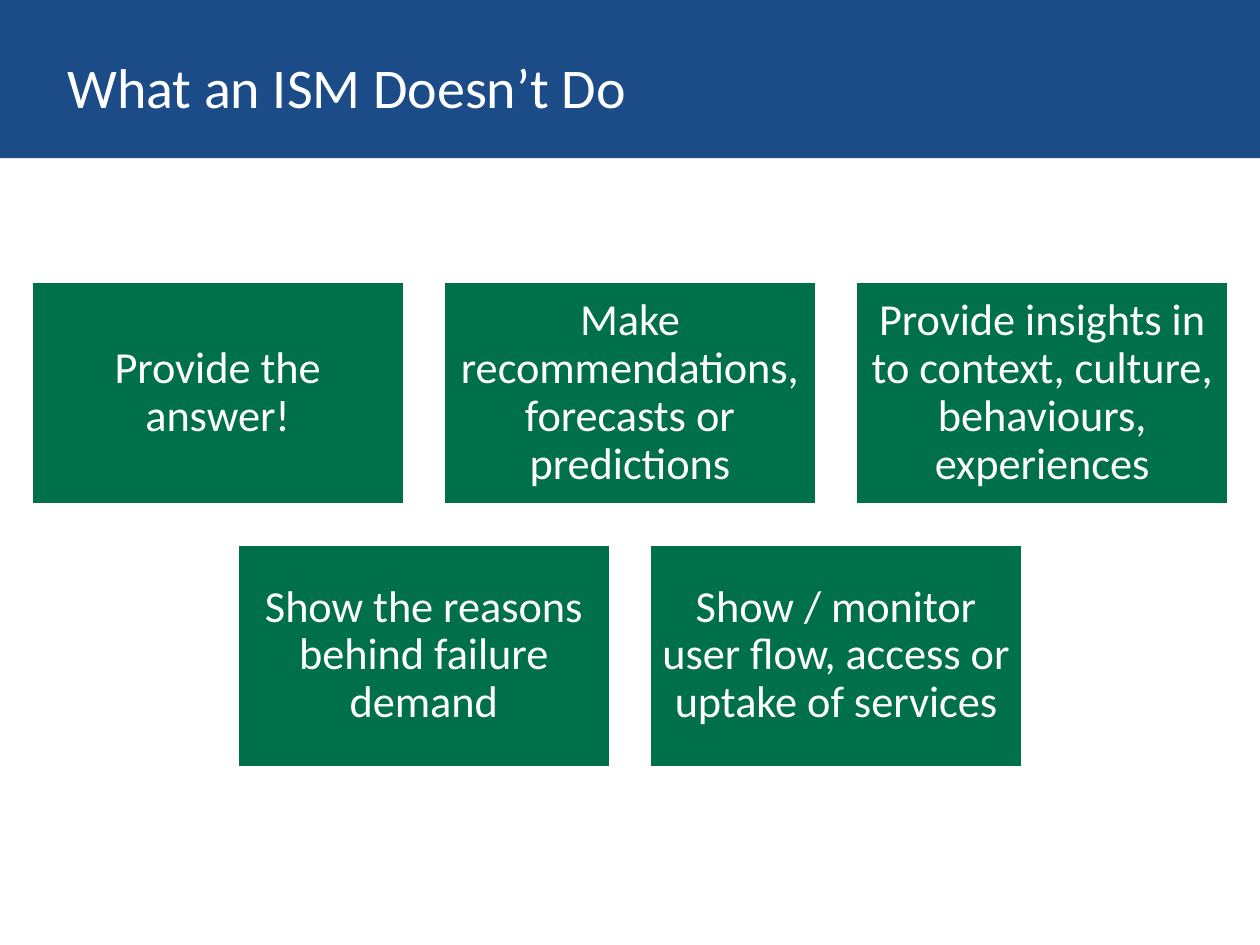
from pptx import Presentation
from pptx.dml.color import RGBColor
from pptx.enum.shapes import MSO_SHAPE
from pptx.enum.text import MSO_ANCHOR, MSO_AUTO_SIZE, PP_ALIGN
from pptx.util import Pt

RECT = MSO_SHAPE.RECTANGLE
MIDDLE = MSO_ANCHOR.MIDDLE
NO_FIT = MSO_AUTO_SIZE.NONE
LEFT, CENTER = PP_ALIGN.LEFT, PP_ALIGN.CENTER

SLIDE_W, SLIDE_H = 540, 405
BLUE, GREEN, WHITE = "1B4C87", "00704A", "FFFFFF"
TITLE = "What an ISM Doesn’t Do"
CARD_ROWS = [
    ["Provide the answer!",
     "Make recommendations, forecasts or predictions",
     "Provide insights in to context, culture, behaviours, experiences"],
    ["Show the reasons behind failure demand",
     "Show / monitor user flow, access or uptake of services"],
]


def color(value):
    return RGBColor.from_string(value)


def set_attrs(obj, values):
    for name, value in values.items():
        setattr(obj, name, value)


def add_rect(s, x, y, w, h, fill, line=None):
    sp = s.shapes.add_shape(RECT, Pt(x), Pt(y), Pt(w), Pt(h))
    sp.shadow.inherit = False
    sp.fill.solid()
    sp.fill.fore_color.rgb = color(fill)
    if line:
        sp.line.color.rgb = color(line)
        sp.line.width = Pt(2)
    else:
        sp.line.fill.background()
    return sp


def write_text(sp, text, size, align, inset, spacing=1.0):
    tf = sp.text_frame
    margins = dict.fromkeys(
        ["margin_left", "margin_top", "margin_right", "margin_bottom"], Pt(inset))
    set_attrs(tf, {"word_wrap": True, "auto_size": NO_FIT,
                   "vertical_anchor": MIDDLE, **margins})
    p = tf.paragraphs[0]
    set_attrs(p, {"alignment": align, "line_spacing": spacing})
    r = p.add_run()
    r.text = text
    set_attrs(r.font, {"name": "Calibri", "size": Pt(size)})
    r.font.color.rgb = color(WHITE)


def add_header(s, x, y, w, h):
    band = add_rect(s, x, y, w, h, BLUE)
    title = s.shapes.title
    band._element.addnext(title._element)
    set_attrs(title, {"left": Pt(x + 28.8), "top": Pt(y + 23.8),
                      "width": Pt(w - 39), "height": Pt(26.6)})
    write_text(title, TITLE, 24, LEFT, 0)


def add_cards(s, x, y, w):
    columns = max(len(row) for row in CARD_ROWS)
    card_w = w / (columns + 0.1 * (columns - 1))
    card_h, gap = card_w * 0.6, card_w * 0.1
    for i, row in enumerate(CARD_ROWS):
        row_w = len(row) * (card_w + gap) - gap
        row_x = x + (w - row_w) / 2
        for j, text in enumerate(row):
            sp = add_rect(s, row_x + j * (card_w + gap), y + i * (card_h + gap),
                          card_w, card_h, GREEN, WHITE)
            write_text(sp, text, 19, CENTER, 5.7, 0.9)


def main():
    prs = Presentation()
    set_attrs(prs, {"slide_width": Pt(SLIDE_W), "slide_height": Pt(SLIDE_H)})
    s = prs.slides.add_slide(prs.slide_layouts[5])
    add_header(s, 0, 0, SLIDE_W, 67.8)
    add_cards(s, 13, 120.4, 514)
    prs.save("out.pptx")


if __name__ == "__main__":
    main()
